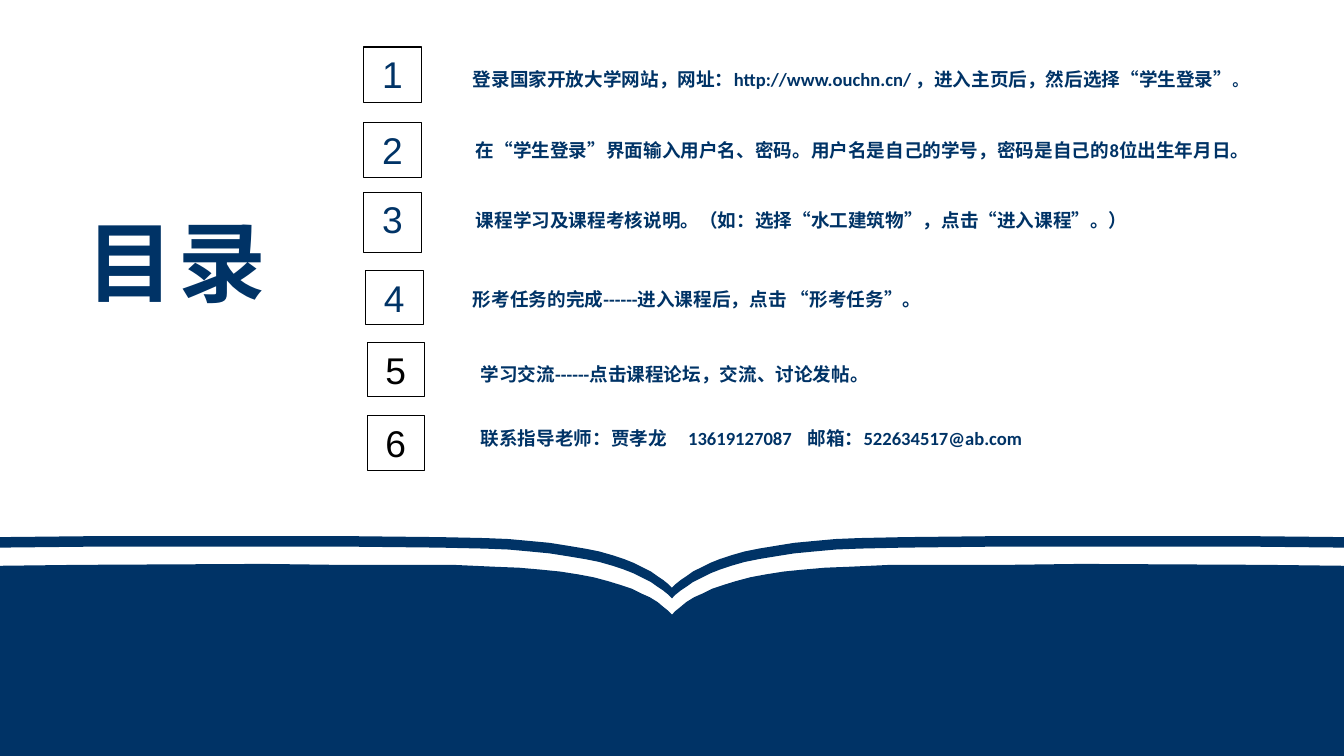
from collections import namedtuple

from lxml import etree
from pptx import Presentation
from pptx.dml.color import RGBColor
from pptx.enum import shapes, text
from pptx.oxml import ns
from pptx.util import Inches, Pt

COLORS = {"navy": "003366", "black": "000000", "white": "FFFFFF"}
Box = namedtuple("Box", "left top width height")
Entry = namedtuple("Entry", "words badge label color line spacing")

ENTRIES = [
    Entry("登录国家开放大学网站，网址：http://www.ouchn.cn/ ，进入主页后，然后选择“学生登录”",
          Box(0, 0.12, 0.61, 0.58), Box(0.96, 0, 8.27, 0.7), "navy", 1, 1.2),
    Entry("在“学生登录”界面输入用户名、密码。用户名是自己的学号，密码是自己的8位出生年月日。",
          Box(0, 0.91, 0.61, 0.58), Box(1.08, 0.99, 8.3, 0.59), "navy", 1, 1.2),
    Entry("课程学习及课程考核说明。（如：选择“水工建筑物”，点击“进入课程”。）",
          Box(0, 1.64, 0.61, 0.63), Box(1.08, 1.77, 7.68, 0.43), "navy", 0.75, 1),
    Entry("形考任务的完成------进入课程后，点击 “形考任务”。",
          Box(0.02, 2.46, 0.61, 0.57), Box(1.05, 2.59, 6.83, 0.53), "navy", 0.75, 1),
    Entry("学习交流------点击课程论坛，交流、讨论发帖。",
          Box(0.04, 3.21, 0.6, 0.57), Box(1.13, 3.38, 6.51, 0.51), "black", 0.75, 1),
    Entry("联系指导老师：贾孝龙\t13619127087\t邮箱：522634517@ab.com",
          Box(0.04, 3.98, 0.6, 0.57), Box(1.13, 4.05, 7.71, 0.44), "black", 0.75, 1),
]
CONTACT_TABS = [2.17, 3.42]

PAGE_EDGE = [
    (0, 0.02), (0.83, 0.01), (2.75, 0), (3.52, 0.01), (4.74, 0.01), (5.18, 0.03),
    (5.43, 0.04), (5.66, 0.06), (5.86, 0.08), (6.05, 0.11), (6.21, 0.14),
    (6.36, 0.18), (6.49, 0.22), (6.61, 0.26), (6.71, 0.31), (6.8, 0.35),
    (6.88, 0.4), (6.94, 0.45), (6.99, 0.49), (7.03, 0.53),
]
RIBBON_EDGE = [
    (0, 0.01), (0.95, 0), (3.68, 0), (4.6, 0.01), (5.07, 0.02), (5.32, 0.03),
    (5.54, 0.05), (5.75, 0.07), (5.94, 0.1), (6.12, 0.13), (6.27, 0.16),
    (6.41, 0.2), (6.53, 0.24), (6.63, 0.28), (6.73, 0.33), (6.81, 0.37),
    (6.88, 0.42), (6.94, 0.46), (6.99, 0.5), (7.03, 0.54),
]
RIBBON_THICKNESS = 0.11


def color(name):
    """Return the named colour."""
    return RGBColor.from_string(COLORS[name])


def inside(region, box):
    """Return a box measured from a region as slide lengths."""
    return [Inches(value) for value in
            (region.left + box.left, region.top + box.top, box.width, box.height)]


def style(paragraph, size, family, color_name, bold=False):
    """Set the font of a whole paragraph."""
    font = paragraph.font
    font.size, font.name, font.bold = Pt(size), family, bold
    font.color.rgb = color(color_name)


def add_tabs(paragraph, stops):
    """Give a paragraph left tab stops."""
    properties = paragraph._p.get_or_add_pPr()
    tab_list = etree.SubElement(properties, ns.qn("a:tabLst"))
    for stop in stops:
        etree.SubElement(tab_list, ns.qn("a:tab"), pos=str(Inches(stop)), algn="l")


def place_title(slide, region):
    """Place the contents heading."""
    title = slide.shapes.title
    title.left, title.top, title.width, title.height = inside(
        region, Box(0, 0, region.width, region.height))
    frame = title.text_frame
    frame.text = "目录"
    frame.vertical_anchor = text.MSO_ANCHOR.TOP
    frame.auto_size = text.MSO_AUTO_SIZE.NONE
    paragraph = frame.paragraphs[0]
    paragraph.alignment = text.PP_ALIGN.LEFT
    paragraph.line_spacing = 1.2
    style(paragraph, 66, "Arial", "navy", True)
    paragraph.runs[0].font._element.set("spc", "300")


def add_badge(slide, region, number, entry):
    """Draw the numbered square of an entry."""
    badge = slide.shapes.add_shape(
        shapes.MSO_SHAPE.RECTANGLE, *inside(region, entry.badge))
    badge.shadow.inherit = False
    badge.fill.background()
    badge.line.color.rgb = color("black")
    badge.line.width = Pt(entry.line)
    frame = badge.text_frame
    frame.text = str(number)
    frame.vertical_anchor = text.MSO_ANCHOR.TOP
    paragraph = frame.paragraphs[0]
    paragraph.alignment = text.PP_ALIGN.CENTER
    style(paragraph, 28, "Arial", entry.color)


def add_label(slide, region, number, entry):
    """Write the instruction of an entry."""
    frame = slide.shapes.add_textbox(*inside(region, entry.label)).text_frame
    frame.word_wrap = True
    paragraph = frame.paragraphs[0]
    paragraph.line_spacing = entry.spacing
    if "\t" in entry.words:
        add_tabs(paragraph, CONTACT_TABS)
    style(paragraph, 14, "Calibri", "navy", True)
    if number == 1:
        for words, size in ((" ", 28), (entry.words, 14), ("。", 12)):
            run = paragraph.add_run()
            run.text = words
            run.font.size = Pt(size)
    else:
        paragraph.add_run().text = entry.words


def add_entries(slide, region):
    """Place the numbered list of steps."""
    for number, entry in enumerate(ENTRIES, 1):
        add_badge(slide, region, number, entry)
        add_label(slide, region, number, entry)


def add_outline(slide, region, points):
    """Draw a filled navy outline measured from a region."""
    vertices = [(Inches(region.left + x), Inches(region.top + y)) for x, y in points]
    builder = slide.shapes.build_freeform(*vertices[0])
    builder.add_line_segments(vertices[1:], close=True)
    outline = builder.convert_to_shape()
    outline.shadow.inherit = False
    outline.fill.solid()
    outline.fill.fore_color.rgb = color("navy")
    outline.line.fill.background()


def mirrored(edge, width):
    """Extend a left half edge to the full width."""
    return edge + [(width - x, y) for x, y in reversed(edge[:-1])]


def add_book(slide, region):
    """Draw the open book with its ribbon along the foot."""
    pages = region._replace(top=region.top + 0.29, height=region.height - 0.29)
    page_edge = mirrored(PAGE_EDGE, region.width)
    add_outline(slide, pages,
                page_edge + [(pages.width, pages.height), (0, pages.height)])
    top_edge = mirrored(RIBBON_EDGE, region.width)
    bottom_edge = [(x, y + RIBBON_THICKNESS) for x, y in reversed(top_edge)]
    add_outline(slide, region, top_edge + bottom_edge)


def main():
    """Build the contents slide."""
    presentation = Presentation()
    presentation.slide_width, presentation.slide_height = Inches(14.06), Inches(7.91)
    slide = presentation.slides.add_slide(presentation.slide_layouts[5])
    slide.background.fill.solid()
    slide.background.fill.fore_color.rgb = color("white")
    place_title(slide, Box(0.81, 1.91, 2.71, 1.32))
    add_book(slide, Box(0, 5.61, 14.06, 2.3))
    add_entries(slide, Box(3.8, 0.37, 9.38, 4.55))
    presentation.save("out.pptx")


if __name__ == "__main__":
    main()
